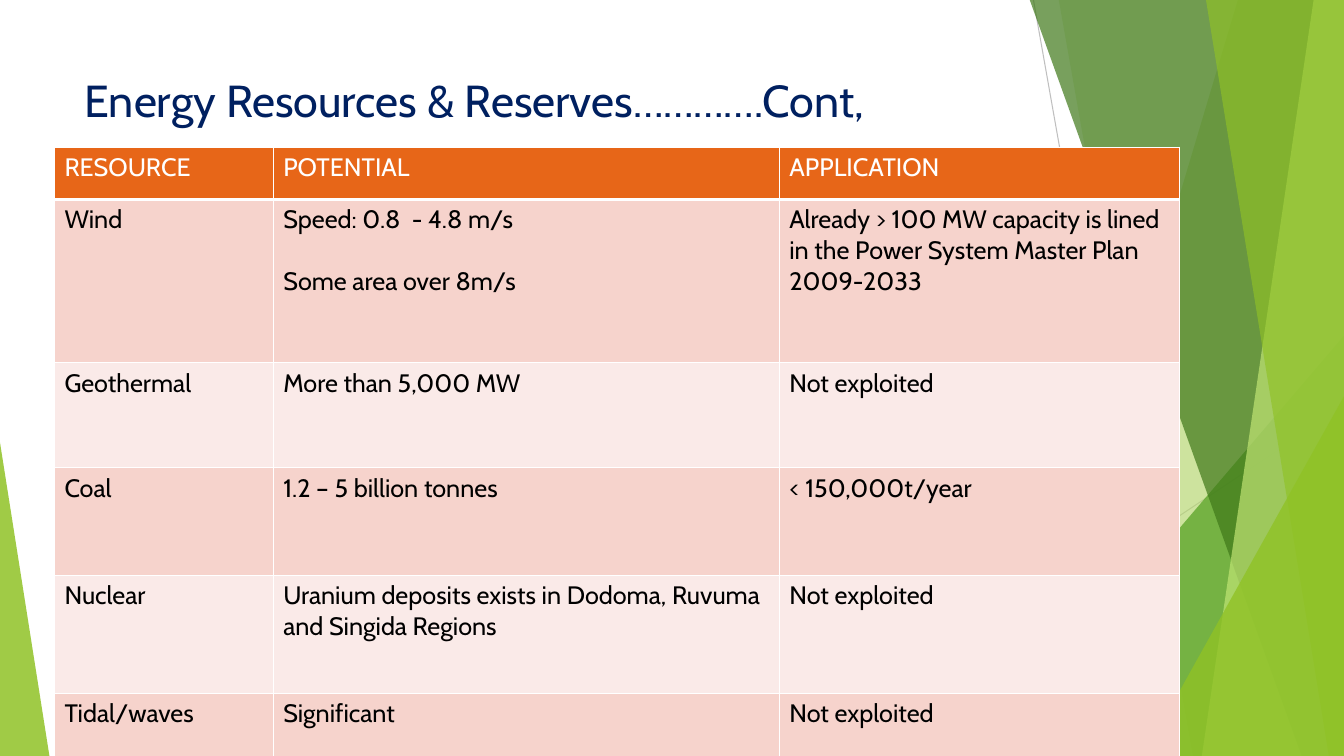
import pptx
import pptx.util
import pptx.dml.color
import pptx.enum.shapes
import pptx.enum.text
import pptx.oxml
import pptx.oxml.ns
from lxml import etree

Inches = pptx.util.Inches
Pt = pptx.util.Pt
qn = pptx.oxml.ns.qn

FONT = "Cabin"
COLORS = {
    "white": "FFFFFF", "black": "000000", "navy": "002060",
    "header": "E76618", "band_dark": "F6D3CC", "band_light": "FAEAE8",
    "gray": "BFBFBF", "pale_gray": "D9D9D9",
    "lime": "90C226", "green": "54A021", "forest": "3F7819", "pale_lime": "C0E474",
}
TOP, BOTTOM, RIGHT = -0.01, 7.5, 13.33

# Facet bands: top left corner, bottom left corner, colour, opacity in percent
BACK_BANDS = [(12.28, 10.04, "lime", 30), (10.5, 11.83, "lime", 20)]
FRONT_BANDS = [
    (10.21, 12.91, "forest", 70),
    (13.03, 11.92, "pale_lime", 70),
    (11.96, 13.18, "lime", 65),
]

COLUMN_WIDTHS = [2.17, 5.02, 3.97]
ROW_HEIGHTS = [0.52, 1.62, 1.04, 1.07, 1.17, 0.78]
ROWS = [
    ["RESOURCE", "POTENTIAL", "APPLICATION"],
    ["Wind", "Speed: 0.8  - 4.8 m/s\nSome area over 8m/s",
     "Already > 100 MW capacity is lined in the Power System Master Plan 2009-2033"],
    ["Geothermal", "More than 5,000 MW", "Not exploited"],
    ["Coal", "1.2 – 5 billion tonnes", "< 150,000t/year"],
    ["Nuclear", "Uranium deposits exists in Dodoma, Ruvuma and Singida Regions",
     "Not exploited"],
    ["Tidal/waves", "Significant", "Not exploited"],
]


def rgb(name):
    return pptx.dml.color.RGBColor.from_string(COLORS[name])


def paint(shape, color, opacity):
    shape.shadow.inherit = False
    shape.line.fill.background()
    shape.fill.solid()
    shape.fill.fore_color.rgb = rgb(color)
    value = shape.fill._xPr.find(".//" + qn("a:srgbClr"))
    etree.SubElement(value, qn("a:alpha")).set("val", str(opacity * 1000))


def add_line(page, start, end, color):
    line = page.shapes.add_connector(
        pptx.enum.shapes.MSO_CONNECTOR.STRAIGHT, *map(Inches, start + end))
    line.line.color.rgb = rgb(color)
    line.line.width = Pt(0.75)
    etree.SubElement(line._element.spPr, qn("a:effectLst"))


def add_band(page, top_left, bottom_left, color, opacity):
    """Draw a band that reaches from a slanted left side to the page edge."""
    builder = page.shapes.build_freeform(Inches(top_left), Inches(TOP), 1.0)
    corners = [(RIGHT, TOP), (RIGHT, BOTTOM), (bottom_left, BOTTOM)]
    builder.add_line_segments([(Inches(x), Inches(y)) for x, y in corners], close=True)
    paint(builder.convert_to_shape(), color, opacity)


def add_triangle(page, left, top, width, apex, color, opacity):
    triangle = page.shapes.add_shape(
        pptx.enum.shapes.MSO_SHAPE.ISOSCELES_TRIANGLE,
        Inches(left), Inches(top), Inches(width), Inches(BOTTOM - top))
    triangle.adjustments[0] = apex
    paint(triangle, color, opacity)


def style_text(para, size, color):
    para.font.name = FONT
    para.font.size = Pt(size)
    para.font.color.rgb = rgb(color)


def add_title(page, text):
    box = page.shapes.add_textbox(Inches(0.74), Inches(0.67), Inches(10.87), Inches(0.95))
    frame = box.text_frame
    frame.word_wrap = True
    frame.vertical_anchor = pptx.enum.text.MSO_ANCHOR.TOP
    frame.text = text
    style_text(frame.paragraphs[0], 32, "navy")


def set_borders(cell, bottom_width):
    properties = cell._tc.get_or_add_tcPr()
    widths = {"a:lnL": 1, "a:lnR": 1, "a:lnT": 1, "a:lnB": bottom_width}
    for position, (tag, width) in enumerate(widths.items()):
        border = etree.Element(qn(tag), w=str(Pt(width)))
        fill = etree.SubElement(border, qn("a:solidFill"))
        etree.SubElement(fill, qn("a:srgbClr")).set("val", COLORS["white"])
        properties.insert(position, border)


def fill_cell(cell, text, fill, color, bottom_width):
    cell.fill.solid()
    cell.fill.fore_color.rgb = rgb(fill)
    set_borders(cell, bottom_width)
    cell.text = text
    for index, para in enumerate(cell.text_frame.paragraphs):
        style_text(para, 18, color)
        if index:
            para.space_before = Pt(22)


def add_resource_table(page):
    table = page.shapes.add_table(
        len(ROWS), len(COLUMN_WIDTHS), Inches(0.54), Inches(1.46),
        Inches(sum(COLUMN_WIDTHS)), Inches(sum(ROW_HEIGHTS))).table
    table.first_row = False
    table.horz_banding = False
    for column, width in zip(table.columns, COLUMN_WIDTHS):
        column.width = Inches(width)
    for index, (row, height, texts) in enumerate(zip(table.rows, ROW_HEIGHTS, ROWS)):
        row.height = Inches(height)
        if index == 0:
            look = ("header", "white", 3)
        else:
            look = ("band_dark" if index % 2 else "band_light", "black", 1)
        for cell, text in zip(row.cells, texts):
            fill_cell(cell, text, *look)


def main():
    deck = pptx.Presentation()
    deck.slide_width = Inches(13.33)
    deck.slide_height = Inches(7.5)
    page = deck.slides.add_slide(deck.slide_layouts[6])

    # Green facets behind the content
    add_line(page, (10.25, 0), (11.58, BOTTOM), "gray")
    add_line(page, (RIGHT, 4.03), (8.12, BOTTOM), "pale_gray")
    for band in BACK_BANDS:
        add_band(page, *band)
    add_triangle(page, 9.77, 3.33, 3.56, 1, "green", 72)
    for band in FRONT_BANDS:
        add_band(page, *band)
    add_triangle(page, 11.34, 3.93, 1.99, 1, "lime", 80)
    add_triangle(page, 0, 4.39, 0.49, 0, "lime", 85)

    # Title and table
    add_title(page, "Energy Resources & Reserves………….Cont,")
    add_resource_table(page)

    deck.save("out.pptx")


if __name__ == "__main__":
    main()
